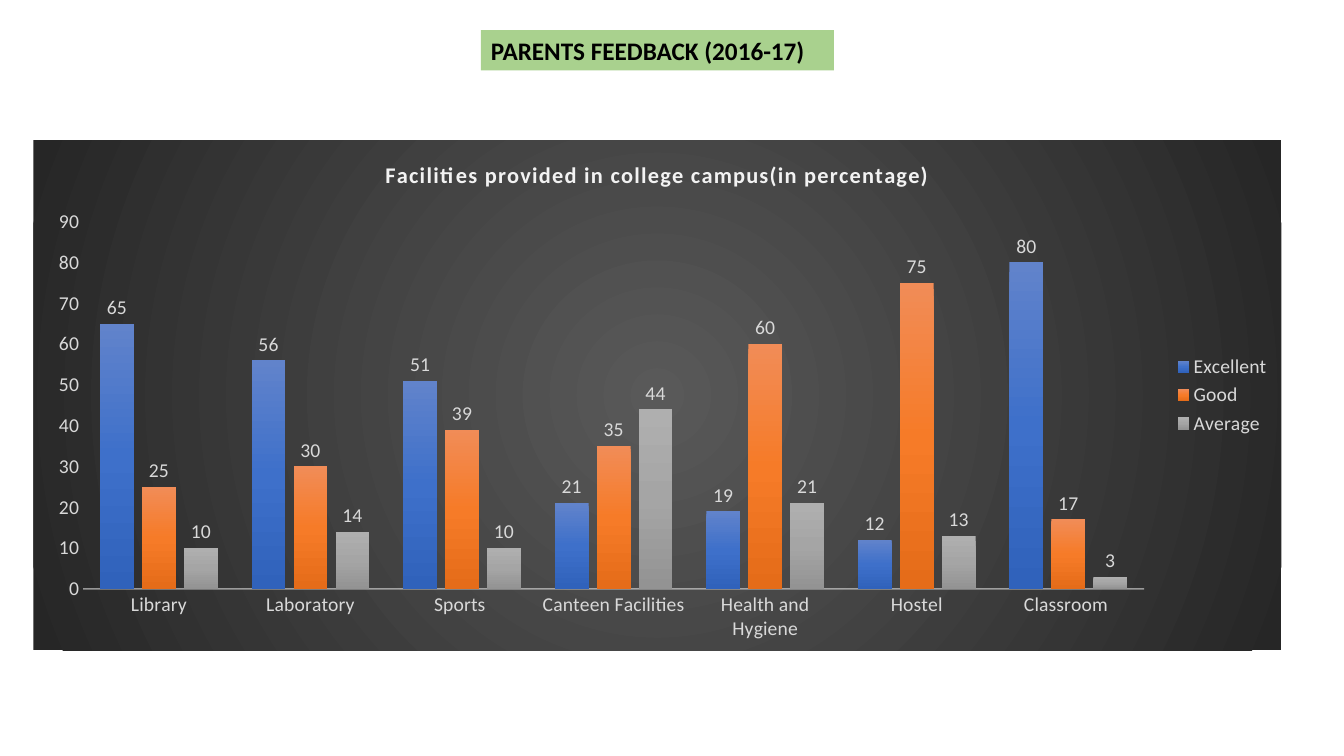
from lxml import etree
from pptx import Presentation
from pptx import util as u
from pptx.chart.data import CategoryChartData
from pptx.dml.color import RGBColor
from pptx.enum import chart as ch
from pptx.enum import text
from pptx.enum.shapes import MSO_SHAPE
from pptx.oxml import parse_xml
from pptx.oxml.ns import nsdecls, qn

WIDTH, HEIGHT = 13.33, 7.5
FONT = "Calibri"
HEADING = "PARENTS FEEDBACK (2016-17)"
CHART_TITLE = "Facilities provided in college campus(in percentage)"
FACILITIES = ["Library", "Laboratory", "Sports ", "Canteen Facilities",
              "Health and Hygiene", "Hostel", "Classroom "]
RATINGS = {
    "Excellent": ([65, 56, 51, 21, 19, 12, 80], ["6183CB", "3E70CA", "3062BB"]),
    "Good": ([25, 30, 39, 35, 60, 75, 17], ["F18C57", "F67B28", "E56C19"]),
    "Average": ([10, 14, 10, 44, 21, 13, 3], ["AFAFAF", "A5A5A5", "939393"]),
}
BACKDROP = ["595959", "262626"]
LABEL_COLOR = "D9D9D9"
HEADING_BOX = (4.77, 0.3, 3.5, 0.4)
CHART_BOX = (0.33, 1.39, 12.38, 5.06)
PLOT_SHARES = {"x": 0.04, "y": 0.16, "w": 0.85, "h": 0.72}

DOWNWARD = '<a:lin ang="5400000" scaled="0"/>'
RADIAL = ('<a:path path="circle"><a:fillToRect l="50000" t="50000" '
          'r="50000" b="50000"/></a:path>')


def rgb(color):
    return RGBColor.from_string(color)


def style_font(font, size, color, bold=False):
    font.name, font.size, font.bold = FONT, u.Pt(size), bold
    font.color.rgb = rgb(color)


def gradient(colors, direction):
    """Return a gradFill element with evenly spaced stops."""
    step = 100000 // (len(colors) - 1)
    stops = "".join(f'<a:gs pos="{i * step}"><a:srgbClr val="{color}"/></a:gs>'
                    for i, color in enumerate(colors))
    return parse_xml(f'<a:gradFill {nsdecls("a")} rotWithShape="1">'
                     f'<a:gsLst>{stops}</a:gsLst>{direction}</a:gradFill>')


def add_heading(slide):
    heading = slide.shapes.add_shape(MSO_SHAPE.RECTANGLE, *map(u.Inches, HEADING_BOX))
    heading.shadow.inherit = False
    heading.fill.solid()
    heading.fill.fore_color.rgb = rgb("A9D18E")
    heading.line.fill.background()
    frame = heading.text_frame
    frame.text = HEADING
    frame.word_wrap = True
    frame.vertical_anchor = text.MSO_ANCHOR.TOP
    paragraph = frame.paragraphs[0]
    paragraph.alignment = text.PP_ALIGN.LEFT
    style_font(paragraph.runs[0].font, 18, "000000", bold=True)


def style_title(chart):
    chart.has_title = True
    frame = chart.chart_title.text_frame
    frame.text = CHART_TITLE
    font = frame.paragraphs[0].runs[0].font
    style_font(font, 16, "F2F2F2", bold=True)
    font._element.set("spc", "100")


def style_axes(chart):
    for axis in (chart.category_axis, chart.value_axis):
        axis.major_tick_mark = axis.minor_tick_mark = ch.XL_TICK_MARK.NONE
        axis.has_major_gridlines = False
        style_font(axis.tick_labels.font, 14, LABEL_COLOR)
    chart.value_axis.minimum_scale = 0
    chart.value_axis.maximum_scale = 90
    chart.value_axis.major_unit = 10
    chart.value_axis.format.line.fill.background()
    line = chart.category_axis.format.line
    line.width = u.Pt(1)
    line.color.rgb = rgb("F2F2F2")
    line_color = chart.category_axis._element.find(".//" + qn("a:ln")).find(".//" + qn("a:srgbClr"))
    etree.SubElement(line_color, qn("a:alpha"), val="54000")


def style_columns(chart):
    plot = chart.plots[0]
    plot.gap_width, plot.overlap = 100, -24
    plot.vary_by_categories = False
    for series, (_, colors) in zip(plot.series, RATINGS.values()):
        series._element.get_or_add_spPr().append(gradient(colors, DOWNWARD))
        labels = series.data_labels
        labels.show_value = True
        labels.position = ch.XL_LABEL_POSITION.OUTSIDE_END
        style_font(labels.font, 14, LABEL_COLOR)


def place_plot(chart):
    area = chart._chartSpace.find(".//" + qn("c:plotArea"))
    for layout in area.findall(qn("c:layout")):
        area.remove(layout)
    modes = '<c:xMode val="edge"/><c:yMode val="edge"/>'
    shares = "".join(f'<c:{key} val="{share}"/>' for key, share in PLOT_SHARES.items())
    area.insert(0, parse_xml(
        f'<c:layout {nsdecls("c")}><c:manualLayout><c:layoutTarget val="inner"/>'
        f'{modes}{shares}</c:manualLayout></c:layout>'))


def fill_backdrop(chart):
    properties = parse_xml(f'<c:spPr {nsdecls("c", "a")}><a:ln><a:noFill/></a:ln></c:spPr>')
    properties.insert(0, gradient(BACKDROP, RADIAL))
    chart._chartSpace.find(qn("c:chart")).addnext(properties)


def add_ratings_chart(slide):
    data = CategoryChartData()
    data.categories = FACILITIES
    for rating, (values, _) in RATINGS.items():
        data.add_series(rating, values)
    chart = slide.shapes.add_chart(ch.XL_CHART_TYPE.COLUMN_CLUSTERED,
                                   *map(u.Inches, CHART_BOX), data).chart
    style_font(chart.font, 14, "000000")
    style_title(chart)
    style_axes(chart)
    style_columns(chart)
    chart.has_legend = True
    chart.legend.position = ch.XL_LEGEND_POSITION.RIGHT
    chart.legend.include_in_layout = False
    style_font(chart.legend.font, 14, LABEL_COLOR)
    place_plot(chart)
    fill_backdrop(chart)


def main():
    presentation = Presentation()
    presentation.slide_width = u.Inches(WIDTH)
    presentation.slide_height = u.Inches(HEIGHT)
    slide = presentation.slides.add_slide(presentation.slide_layouts[6])
    add_ratings_chart(slide)
    add_heading(slide)
    presentation.save("out.pptx")


if __name__ == "__main__":
    main()
